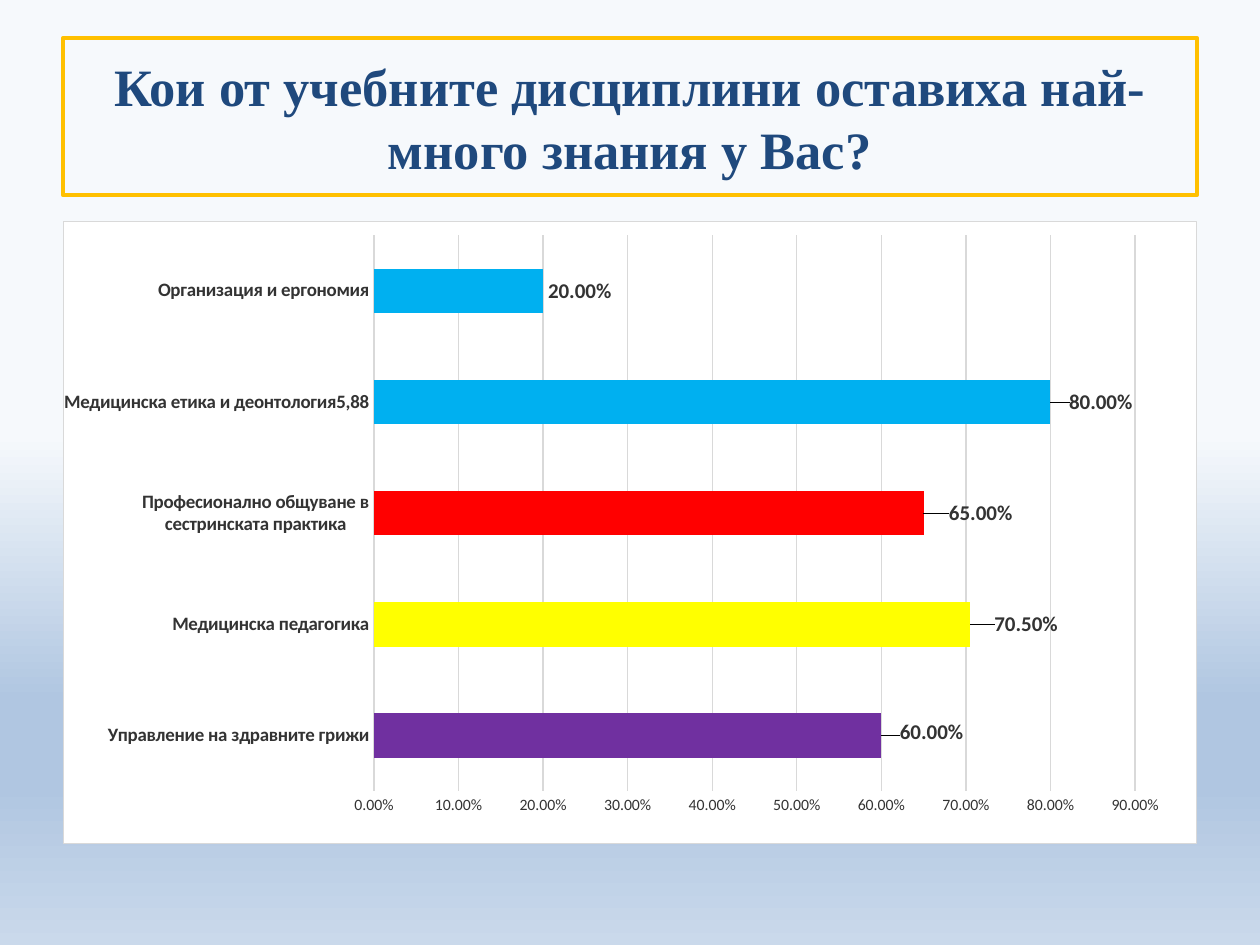
from dataclasses import dataclass

from lxml import etree
from pptx import Presentation
from pptx.chart.data import CategoryChartData
from pptx.dml.color import RGBColor
from pptx.enum.chart import XL_CHART_TYPE, XL_LABEL_POSITION, XL_TICK_MARK
from pptx.enum.text import MSO_ANCHOR, MSO_AUTO_SIZE, PP_ALIGN
from pptx.oxml import parse_xml
from pptx.oxml.ns import nsdecls, qn
from pptx.util import Pt

BAR_CLUSTERED = XL_CHART_TYPE.BAR_CLUSTERED
OUTSIDE_END = XL_LABEL_POSITION.OUTSIDE_END
NO_TICK = XL_TICK_MARK.NONE
MIDDLE = MSO_ANCHOR.MIDDLE
NO_AUTOFIT = MSO_AUTO_SIZE.NONE
CENTER = PP_ALIGN.CENTER
TITLE_ONLY = 5
PERCENT = "0.00%"


@dataclass(frozen=True)
class Theme:
    title_font: str = "Times New Roman"
    chart_font: str = "Calibri"
    title_size: float = 30
    label_size: float = 12
    category_size: float = 10.8
    value_size: float = 9
    title: str = "1F497D"
    title_border: str = "FFC000"
    text: str = "333333"
    grid: str = "D9D9D9"
    panel: str = "FFFFFF"
    bar: str = "00B0F0"
    # Position in percent and colour, from top to bottom
    background: tuple = ((46, "F6F9FC"), (74, "B0C6E1"), (83, "B0C6E1"), (100, "CAD9EB"))


THEME = Theme()

# Discipline, share, bar colour, label shift as fractions of the chart
DISCIPLINES = [
    ("Управление на здравните грижи", 0.6, "7030A0", (0.012, -0.005)),
    ("Медицинска педагогика", 0.705, "FFFF00", (0.017, 0)),
    ("Професионално общуване в сестринската практика", 0.65, "FF0000", (0.018, 0)),
    ("Медицинска етика и деонтология5,88", 0.8, THEME.bar, (0.012, 0)),
    ("Организация и ергономия", 0.2, THEME.bar, None),
]


def color(value):
    return RGBColor.from_string(value)


def style_font(font, size, bold=False):
    font.name = THEME.chart_font
    font.size = Pt(size)
    font.bold = bold
    font.color.rgb = color(THEME.text)


def manual_layout(x, y, width=None, height=None):
    """Return a c:layout; with a size it places the inner plot area."""
    layout = etree.Element(qn("c:layout"))
    manual = etree.SubElement(layout, qn("c:manualLayout"))
    settings = [("x", x), ("y", y)]
    if width is not None:
        settings = [("layoutTarget", "inner"), ("xMode", "edge"), ("yMode", "edge"),
                    *settings, ("w", width), ("h", height)]
    for name, value in settings:
        etree.SubElement(manual, qn(f"c:{name}")).set("val", str(value))
    return layout


def paint_background(slide):
    fill = slide.background.fill
    fill.gradient()
    fill.gradient_angle = 270
    stops = slide.element.xpath(".//p:bgPr//a:gsLst")[0]
    for stop in list(stops):
        stops.remove(stop)
    for position, value in THEME.background:
        stop = etree.SubElement(stops, qn("a:gs"), pos=str(position * 1000))
        etree.SubElement(stop, qn("a:srgbClr"), val=value)


def add_title(slide, left, top, width, height):
    title = slide.shapes.title
    title.left, title.top, title.width, title.height = left, top, width, height
    title.line.color.rgb = color(THEME.title_border)
    title.line.width = Pt(2.25)
    frame = title.text_frame
    frame.word_wrap = True
    frame.auto_size = NO_AUTOFIT
    frame.vertical_anchor = MIDDLE
    paragraph = frame.paragraphs[0]
    paragraph.alignment = CENTER
    run = paragraph.add_run()
    run.text = "Кои от учебните дисциплини оставиха най-много знания у Вас?"
    run.font.name = THEME.title_font
    run.font.size = Pt(THEME.title_size)
    run.font.bold = True
    run.font.color.rgb = color(THEME.title)


def style_panel(chart):
    # White chart area with a thin border, and a fixed plot area
    panel = parse_xml(
        f'<c:spPr {nsdecls("c", "a")}>'
        f'<a:solidFill><a:srgbClr val="{THEME.panel}"/></a:solidFill>'
        f'<a:ln w="{Pt(0.75)}"><a:solidFill><a:srgbClr val="{THEME.grid}"/></a:solidFill></a:ln>'
        "</c:spPr>")
    chart.element.find(qn("c:chart")).addnext(panel)
    plot_area = chart.element.xpath(".//c:plotArea")[0]
    for layout in plot_area.findall(qn("c:layout")):
        plot_area.remove(layout)
    plot_area.insert(0, manual_layout(0.274, 0.023, 0.672, 0.893))


def style_axes(chart):
    for axis in (chart.category_axis, chart.value_axis):
        axis.major_tick_mark = axis.minor_tick_mark = NO_TICK
        axis.format.line.fill.background()
    style_font(chart.category_axis.tick_labels.font, THEME.category_size, bold=True)
    values = chart.value_axis
    values.minimum_scale, values.maximum_scale, values.major_unit = 0, 0.9, 0.1
    style_font(values.tick_labels.font, THEME.value_size)
    values.tick_labels.number_format = PERCENT
    values.tick_labels.number_format_is_linked = False
    values.has_major_gridlines = True
    grid_line = values.major_gridlines.format.line
    grid_line.color.rgb = color(THEME.grid)
    grid_line.width = Pt(0.75)


def style_bars(chart):
    plot = chart.plots[0]
    plot.gap_width = 150
    plot.vary_by_categories = False
    series = plot.series[0]
    series.format.fill.solid()
    series.format.fill.fore_color.rgb = color(THEME.bar)

    labels = series.data_labels
    labels.show_value = True
    labels.number_format = PERCENT
    labels.number_format_is_linked = False
    labels.position = OUTSIDE_END
    style_font(labels.font, THEME.label_size, bold=True)

    for index, (_, _, bar_color, shift) in enumerate(DISCIPLINES):
        point = series.points[index]
        if bar_color != THEME.bar:
            point.format.fill.solid()
            point.format.fill.fore_color.rgb = color(bar_color)
        if shift:
            style_font(point.data_label.font, THEME.label_size, bold=True)
            point.data_label.position = OUTSIDE_END
            label_index = chart.element.xpath(f'.//c:dLbl/c:idx[@val="{index}"]')[0]
            label_index.addnext(manual_layout(*shift))


def add_discipline_chart(slide, left, top, width, height):
    data = CategoryChartData(number_format=PERCENT)
    data.categories = [name for name, *_ in DISCIPLINES]
    data.add_series("Series 1", [share for _, share, *_ in DISCIPLINES])
    chart = slide.shapes.add_chart(BAR_CLUSTERED, left, top, width, height, data).chart
    chart.has_legend = False
    chart.has_title = False
    style_font(chart.font, 10)
    style_panel(chart)
    style_axes(chart)
    style_bars(chart)


def main():
    presentation = Presentation()
    presentation.slide_width, presentation.slide_height = Pt(720), Pt(540)
    slide = presentation.slides.add_slide(presentation.slide_layouts[TITLE_ONLY])
    paint_background(slide)
    add_title(slide, Pt(36), Pt(21.6), Pt(648), Pt(90))
    add_discipline_chart(slide, Pt(36), Pt(126), Pt(648), Pt(356.4))
    presentation.save("out.pptx")


if __name__ == "__main__":
    main()
